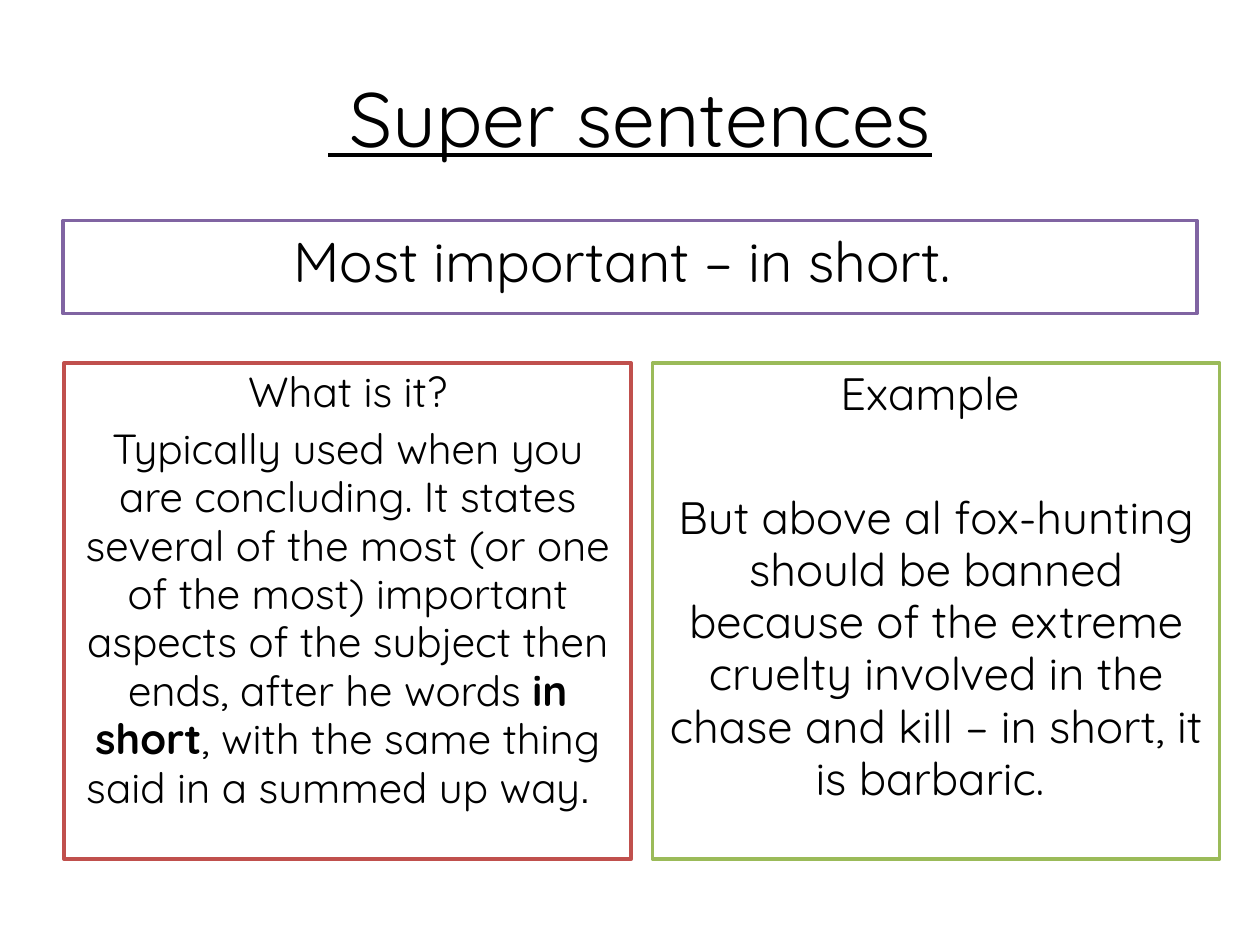
"""Build the 'Super sentences' slide with a title, a banner and two panels."""
from pptx import Presentation
from pptx.dml.color import RGBColor
from pptx.enum.shapes import MSO_SHAPE as Shape
from pptx.enum.text import MSO_ANCHOR as Anchor, PP_ALIGN as Align
from pptx.util import Inches, Pt

BLACK = RGBColor(0x00, 0x00, 0x00)
WHITE = RGBColor(0xFF, 0xFF, 0xFF)
PURPLE = RGBColor(0x80, 0x64, 0xA2)
RED = RGBColor(0xC0, 0x50, 0x4D)
GREEN = RGBColor(0x9B, 0xBB, 0x59)
FONT = "Quicksand"

TITLE = [(0, [(" Super sentences", {"underline": True})])]
BANNER = [(0, [("Most important – in short. ", {})])]
DEFINITION = [
    (0, [("What is it?", {})]),
    (4.8, [
        ("Typically used when you are concluding. It states several of the most "
         "(or one of the most) important aspects of the subject then ends, "
         "after he words ", {}),
        ("in short", {"bold": True}),
        (", with the same thing said in a summed up way", {}),
        (".  ", {"size": Pt(20), "name": "Arial"}),
    ]),
]
EXAMPLE = [
    (0, [("Example ", {})]),
    (40.7, [("But above al fox-hunting should be banned because of the extreme "
             "cruelty involved in the chase and kill – in short, it is barbaric. ", {})]),
]

PANEL_TOP, PANEL_WIDTH, PANEL_HEIGHT = 2.88, 4.5, 3.94
PANELS = [(0.51, RED, DEFINITION, 24), (5.18, GREEN, EXAMPLE, 25.9)]


def write(frame, paragraphs, size, anchor=Anchor.TOP, spacing=1.0):
    frame.word_wrap = True
    frame.vertical_anchor = anchor
    for index, (space_before, runs) in enumerate(paragraphs):
        paragraph = frame.add_paragraph() if index else frame.paragraphs[0]
        paragraph.alignment = Align.CENTER
        paragraph.space_before = Pt(space_before)
        paragraph.line_spacing = spacing
        for words, style in runs:
            run = paragraph.add_run()
            run.text = words
            run.font.color.rgb = BLACK
            for key, value in {"name": FONT, "size": Pt(size), **style}.items():
                setattr(run.font, key, value)


def add_box(slide, bounds, outline):
    box = slide.shapes.add_shape(Shape.RECTANGLE, *map(Inches, bounds))
    box.shadow.inherit = False
    box.fill.solid()
    box.fill.fore_color.rgb = WHITE
    box.line.color.rgb = outline
    box.line.width = Pt(2)
    return box.text_frame


def main():
    deck = Presentation()
    deck.slide_width, deck.slide_height = Inches(10), Inches(7.5)
    slide = deck.slides.add_slide(deck.slide_layouts[6])

    title = slide.shapes.add_textbox(*map(Inches, (0.5, 0.3, 9, 1.25)))
    write(title.text_frame, TITLE, 44, Anchor.MIDDLE)
    write(add_box(slide, (0.5, 1.75, 9, 0.74), PURPLE), BANNER, 32)
    for left, outline, paragraphs, size in PANELS:
        panel = add_box(slide, (left, PANEL_TOP, PANEL_WIDTH, PANEL_HEIGHT), outline)
        write(panel, paragraphs, size, spacing=0.96)

    deck.save("out.pptx")


if __name__ == "__main__":
    main()
